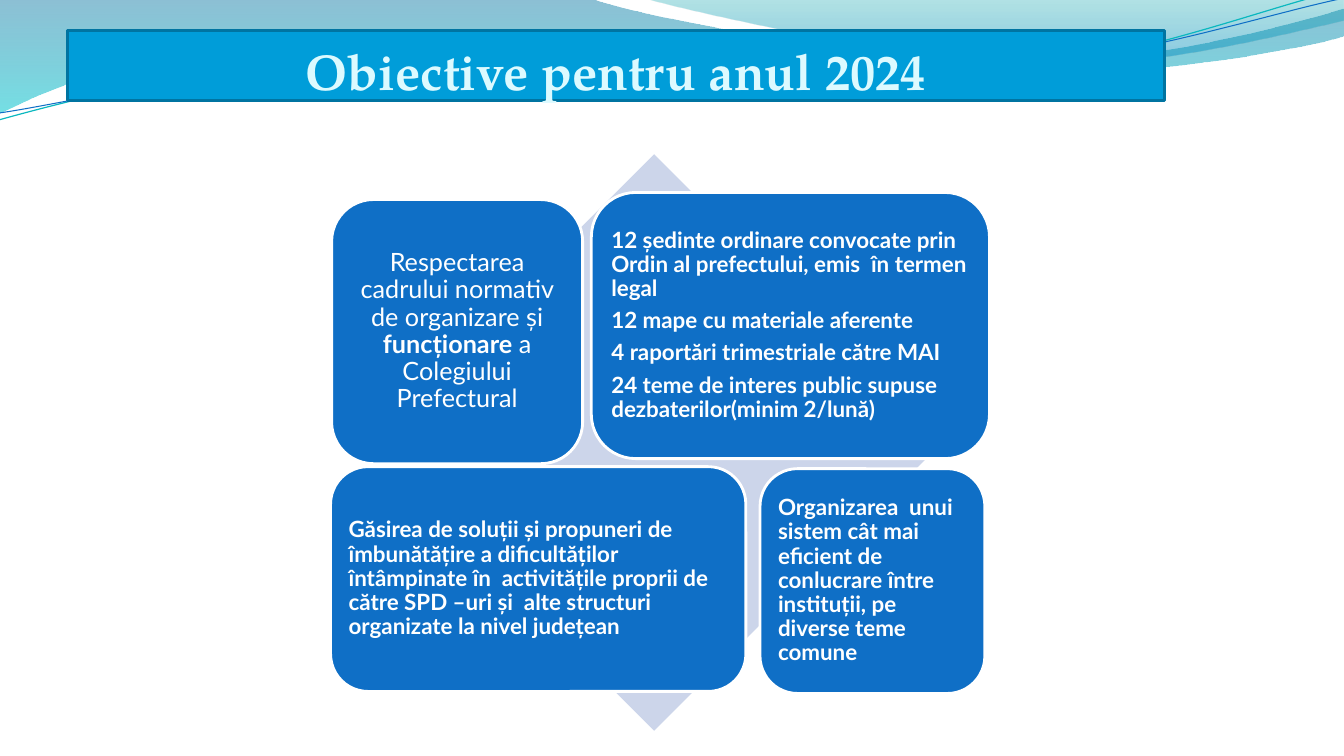
import math
from dataclasses import dataclass

from pptx import Presentation
from pptx import util as u
from pptx.dml import color as dml
from pptx.enum import shapes, text
from pptx.oxml import ns
from lxml import etree

COLUMNS, ROWS = 40, 22.5


@dataclass(frozen=True)
class Theme:
    white: str = "FFFFFF"
    banner: str = "009DD9"
    banner_edge: str = "0074A1"
    title: str = "DCFAFF"
    title_edge: str = "00637F"
    card: str = "0F6FC6"
    diamond: str = "CCD5EA"
    teal: str = "0AB8BF"
    # Gradient stops: position, colour, opacity in percent
    left_wave: tuple = ((0, "0074A1", 45), (1, "00C6CF", 55))
    right_wave: tuple = ((0, "00A1A9", 30), (0.8, "008BBF", 45))
    title_font: str = "TeX Gyre Pagella"
    body_font: str = "Lato"
    title_size: float = 36
    lead_size: float = 18
    body_size: float = 16


def rgb(code):
    return dml.RGBColor.from_string(code)


def add_node(parent, tag, **attributes):
    return etree.SubElement(parent, ns.qn("a:" + tag), **attributes)


class Board:
    """Holds the theme and the current slide; lengths are grid columns and rows."""

    def __init__(self, deck, theme):
        self.theme = theme
        self.slide = deck.slides.add_slide(deck.slide_layouts[6])
        self.column = deck.slide_width / COLUMNS
        self.row = deck.slide_height / ROWS

    def emu(self, x, y):
        return round(x * self.column), round(y * self.row)

    def outline(self, shape, color, width):
        if color is None:
            shape.line.fill.background()
        else:
            shape.line.color.rgb = rgb(color)
            shape.line.width = u.Pt(width)

    def block(self, kind, place, fill, edge=None):
        shape = self.slide.shapes.add_shape(
            kind, *self.emu(*place[:2]), *self.emu(*place[2:]))
        shape.shadow.inherit = False
        shape.fill.solid()
        shape.fill.fore_color.rgb = rgb(fill)
        self.outline(shape, edge, 2)
        return shape

    def swoosh(self, place, start, segments, stops=None, edge=None, width=0, turn=0):
        """Draws lines (one point) and curves (two controls and an end)."""
        left, top, wide, high = place
        middle_x, middle_y = left + wide / 2, top + high / 2
        cos, sin = math.cos(math.radians(turn)), math.sin(math.radians(turn))

        def local(point):
            dx, dy = point[0] - middle_x, point[1] - middle_y
            return self.emu(dx * cos + dy * sin + wide / 2,
                            dy * cos - dx * sin + high / 2)

        builder = self.slide.shapes.build_freeform(*local(start))
        builder.add_line_segments([local(s[-2:]) for s in segments],
                                  close=stops is not None)
        shape = builder.convert_to_shape()
        shape.left, shape.top = self.emu(left, top)
        shape.width, shape.height = self.emu(wide, high)
        shape.rotation = turn % 360
        self.bend(shape, [local(start)], [
            [local(s[i:i + 2]) for i in range(0, len(s), 2)] for s in segments])
        shape.shadow.inherit = False
        if stops:
            self.shade(shape, stops)
        else:
            shape.fill.background()
        self.outline(shape, edge, width)

    def bend(self, shape, start, segments):
        track = next(shape.element.spPr.iter(ns.qn("a:path")))
        track.set("w", str(shape.width))
        track.set("h", str(shape.height))
        closing = track.findall(ns.qn("a:close"))
        for node in list(track):
            track.remove(node)
        moves = [("moveTo", start)]
        moves += [("lnTo" if len(s) == 1 else "cubicBezTo", s) for s in segments]
        for tag, points in moves:
            move = add_node(track, tag)
            for x, y in points:
                add_node(move, "pt", x=str(x), y=str(y))
        track.extend(closing)

    def shade(self, shape, stops):
        shape.fill.gradient()
        shape.fill.gradient_angle = 270
        for stop, (position, color, opacity) in zip(shape.fill.gradient_stops, stops):
            stop.position = position
            stop.color.rgb = rgb(color)
        colors = shape.element.spPr.iter(ns.qn("a:srgbClr"))
        for node, (position, color, opacity) in zip(colors, stops):
            add_node(node, "alpha", val=str(opacity * 1000))

    def frame(self, shape, anchor, margins):
        frame = shape.text_frame
        frame.word_wrap = True
        frame.vertical_anchor = anchor
        (frame.margin_left, frame.margin_top,
         frame.margin_right, frame.margin_bottom) = (u.Inches(m) for m in margins)
        return frame

    def run(self, paragraph, words, font, size, color, bold):
        run = paragraph.add_run()
        run.text = words
        run.font.name = font
        run.font.size = u.Pt(size)
        run.font.bold = bold
        run.font.color.rgb = rgb(color)
        return run

    def title(self, words, place):
        theme = self.theme
        banner = self.block(shapes.MSO_SHAPE.RECTANGLE, place,
                            theme.banner, theme.banner_edge)
        frame = self.frame(banner, text.MSO_ANCHOR.BOTTOM, (0, 0.05, 0, 0))
        paragraph = frame.paragraphs[0]
        paragraph.alignment = text.PP_ALIGN.CENTER
        run = self.run(paragraph, words, theme.title_font, theme.title_size,
                       theme.title, True)
        edge = etree.Element(ns.qn("a:ln"), w=str(u.Pt(1)))
        add_node(add_node(edge, "solidFill"), "srgbClr", val=theme.title_edge)
        run._r.get_or_add_rPr().insert(0, edge)

    def card(self, place, paragraphs, size, align):
        theme = self.theme
        card = self.block(shapes.MSO_SHAPE.ROUNDED_RECTANGLE, place,
                          theme.card, theme.white)
        frame = self.frame(card, text.MSO_ANCHOR.MIDDLE, (0.07,) * 4)
        for index, runs in enumerate(paragraphs):
            paragraph = frame.add_paragraph() if index else frame.paragraphs[0]
            paragraph.alignment = align
            paragraph.line_spacing = 0.9
            paragraph.space_after = u.Pt(0.36 * size)
            for words, bold in runs:
                self.run(paragraph, words, theme.body_font, size, theme.white, bold)


def main():
    deck = Presentation()
    deck.slide_width, deck.slide_height = u.Inches(13.33), u.Inches(7.5)
    theme = Theme()
    board = Board(deck, theme)

    # Waves across the top
    board.swoosh((-0.03, -0.03, 40.08, 3.42), (0, 0), [
        (17.61, -0.03),
        (19.02, 0.51, 26.55, 1.89, 30.33, 1.89),
        (34.14, 1.89, 38.34, 0.78, 39.99, 0.27),
        (40.05, 1.08),
        (39.33, 1.32, 34.8, 2.28, 29.82, 2.25),
        (24.87, 2.25, 15.27, 0.84, 10.29, 1.02),
        (5.16, 1.08, 1.83, 2.49, -0.03, 3.39)], theme.left_wave)
    board.swoosh((19.17, -0.03, 20.82, 2.1), (19.17, -0.03), [
        (20.37, 0.33, 27.27, 1.86, 30.75, 1.95),
        (34.23, 2.07, 38.46, 0.96, 39.99, 0.63),
        (39.99, 0)], theme.right_wave)
    board.swoosh((-0.09, 0.66, 40.08, 2.13), (-0.03, 3.57), [
        (1.92, 3.03, 6.33, 1.86, 11.07, 1.65),
        (15.81, 1.44, 23.7, 2.61, 28.5, 2.28),
        (33.3, 1.98, 37.56, 0.24, 39.93, -0.3)],
        edge=theme.teal, width=0.85, turn=-2.7)
    board.swoosh((-0.06, 0.9, 40.14, 1.74), (0, 3.36), [
        (1.89, 3.09, 6.54, 1.98, 11.34, 1.77),
        (16.11, 1.59, 23.88, 2.46, 28.65, 2.16),
        (33.45, 1.86, 37.65, 0.42, 40.02, -0.06)],
        edge=theme.card, width=0.75, turn=-2.7)

    # Title banner
    board.title("Obiective pentru anul 2024", (2, 0.9, 32.67, 2.1))

    # Objectives around the diamond
    board.block(shapes.MSO_SHAPE.DIAMOND, (10.89, 4.59, 17.16, 17.16), theme.diamond)
    board.card((9.87, 5.94, 7.47, 7.86), [[
        ("Respectarea cadrului normativ de organizare și ", False),
        ("funcționare", True),
        (" a Colegiului Prefectural", False)]], theme.lead_size, text.PP_ALIGN.CENTER)
    targets = [
        "12 ședinte ordinare convocate prin Ordin al prefectului, emis  în termen legal",
        "12 mape cu materiale aferente",
        "4 raportări trimestriale către MAI",
        "24 teme de interes public supuse dezbaterilor(minim 2/lună)"]
    solutions = ["Găsirea de soluții și propuneri de îmbunătățire a dificultăților  "
                 "întâmpinate în  activitățile proprii de către SPD –uri și  alte "
                 "structuri organizate la nivel județean"]
    cooperation = ["Organizarea  unui sistem cât mai eficient de conlucrare între "
                   "instituții, pe diverse teme comune"]
    for place, lines in (((17.6, 5.73, 11.85, 7.92), targets),
                         ((9.84, 13.89, 12.36, 6.69), solutions),
                         ((22.62, 13.95, 6.69, 6.69), cooperation)):
        board.card(place, [[(line, True)] for line in lines],
                   theme.body_size, text.PP_ALIGN.LEFT)

    deck.save("out.pptx")


if __name__ == "__main__":
    main()
